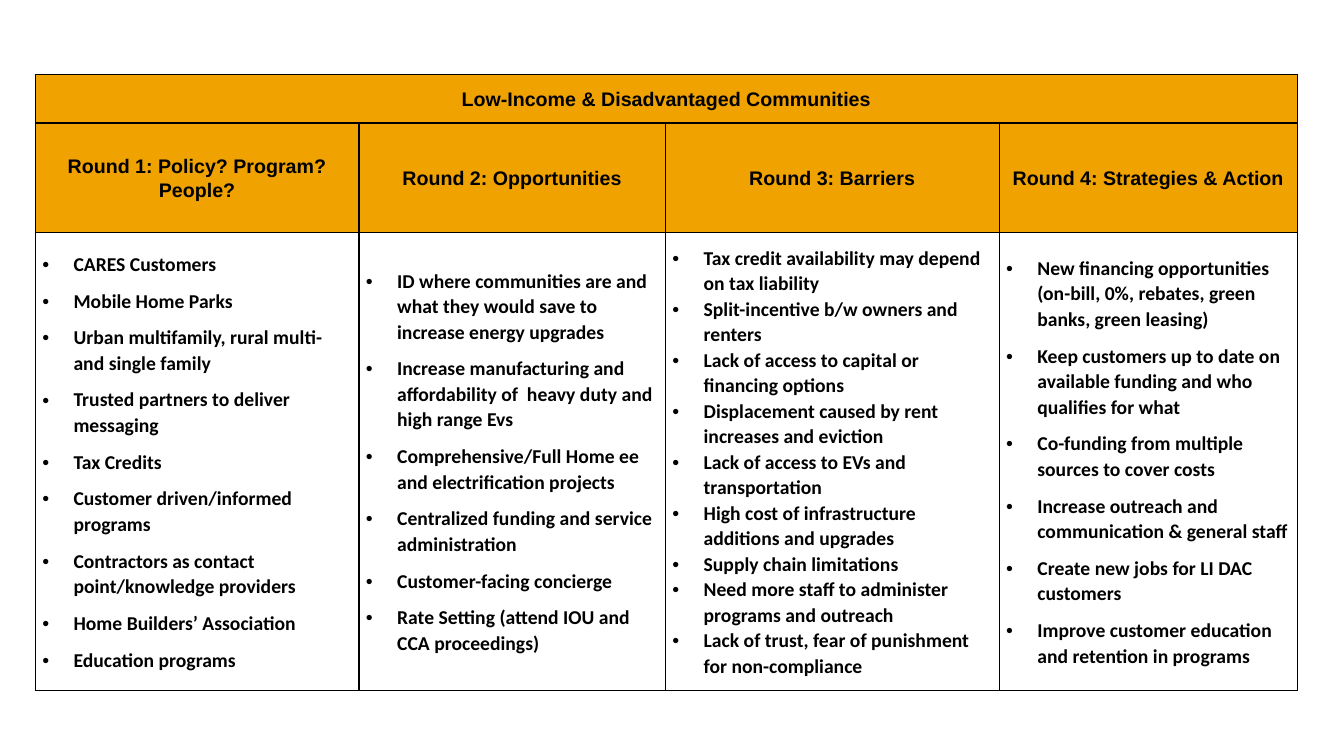
from lxml import etree
from pptx import Presentation
from pptx.dml.color import RGBColor
from pptx.enum import text
from pptx.oxml import ns
from pptx.util import Inches, Pt

BLACK = "000000"
ORANGE = "EFA200"
COLUMN_WIDTHS = (3.21, 3.04, 3.31, 2.96)
ROW_HEIGHTS = (0.48, 1.09, 4.54)
TABLE_TITLE = "Low-Income & Disadvantaged Communities"

# heading, space after each item in points, items
ROUNDS = [
    ("Round 1: Policy? Program? People?", 8, [
        "CARES Customers",
        "Mobile Home Parks",
        "Urban multifamily, rural multi- and single family",
        "Trusted partners to deliver messaging",
        "Tax Credits",
        "Customer driven/informed programs",
        "Contractors as contact point/knowledge providers",
        "Home Builders’ Association",
        "Education programs",
    ]),
    ("Round 2: Opportunities", 8, [
        "ID where communities are and what they would save to increase energy upgrades",
        "Increase manufacturing and affordability of  heavy duty and high range Evs",
        "Comprehensive/Full Home ee and electrification projects",
        "Centralized funding and service administration",
        "Customer-facing concierge",
        "Rate Setting (attend IOU and CCA proceedings)",
    ]),
    ("Round 3: Barriers", 0, [
        "Tax credit availability may depend on tax liability",
        "Split-incentive b/w owners and renters",
        "Lack of access to capital or financing options",
        "Displacement caused by rent increases and eviction",
        "Lack of access to EVs and transportation",
        "High cost of infrastructure additions and upgrades",
        "Supply chain limitations",
        "Need more staff to administer programs and outreach",
        "Lack of trust, fear of punishment for non-compliance",
    ]),
    ("Round 4: Strategies & Action", 8, [
        "New financing opportunities (on-bill, 0%, rebates, green banks, green leasing)",
        "Keep customers up to date on available funding and who qualifies for what",
        "Co-funding from multiple sources to cover costs",
        "Increase outreach and communication & general staff",
        "Create new jobs for LI DAC customers",
        "Improve customer education and retention in programs",
    ]),
]


def color(hex_value):
    return RGBColor.from_string(hex_value)


def add_element(parent, tag, **attributes):
    return etree.SubElement(parent, ns.qn(tag), attributes)


def add_borders(cell):
    properties = cell._tc.get_or_add_tcPr()
    for side in ("L", "R", "T", "B"):
        line = add_element(properties, f"a:ln{side}", w=str(Pt(1)))
        fill = add_element(line, "a:solidFill")
        add_element(fill, "a:srgbClr", val=BLACK)


def format_cell(cell):
    cell.vertical_anchor = text.MSO_ANCHOR.MIDDLE
    cell.margin_left = cell.margin_right = Inches(0.07)
    cell.margin_top = cell.margin_bottom = 0
    add_borders(cell)


def write_paragraph(paragraph, wording, font_name, space_after):
    paragraph.line_spacing = 1.07
    paragraph.space_after = Pt(space_after)
    run = paragraph.add_run()
    run.text = wording
    run.font.name = font_name
    run.font.size = Pt(14)
    run.font.bold = True
    run.font.color.rgb = color(BLACK)


def add_bullet(paragraph):
    properties = paragraph._p.get_or_add_pPr()
    indent = Inches(0.31)
    properties.set("marL", str(indent))
    properties.set("indent", str(-indent))
    add_element(properties, "a:buFont", typeface="Arial")
    add_element(properties, "a:buChar", char="•")


def write_heading(cell, wording):
    cell.fill.solid()
    cell.fill.fore_color.rgb = color(ORANGE)
    paragraph = cell.text_frame.paragraphs[0]
    paragraph.alignment = text.PP_ALIGN.CENTER
    write_paragraph(paragraph, wording, "Arial", 8)


def write_list(cell, items, space_after):
    cell.fill.background()
    frame = cell.text_frame
    for index, item in enumerate(items):
        paragraph = frame.add_paragraph() if index else frame.paragraphs[0]
        write_paragraph(paragraph, item, "Calibri", space_after)
        add_bullet(paragraph)


def add_rounds_table(slide):
    table = slide.shapes.add_table(
        len(ROW_HEIGHTS), len(COLUMN_WIDTHS), Inches(0.35), Inches(0.74),
        Inches(sum(COLUMN_WIDTHS)), Inches(sum(ROW_HEIGHTS))).table
    table.first_row = table.horz_banding = False
    for column, width in zip(table.columns, COLUMN_WIDTHS):
        column.width = Inches(width)
    for row, height in zip(table.rows, ROW_HEIGHTS):
        row.height = Inches(height)
    for cell in table.iter_cells():
        format_cell(cell)

    title_cell = table.cell(0, 0)
    title_cell.merge(table.cell(0, len(COLUMN_WIDTHS) - 1))
    write_heading(title_cell, TABLE_TITLE)
    for index, (heading, space_after, items) in enumerate(ROUNDS):
        write_heading(table.cell(1, index), heading)
        write_list(table.cell(2, index), items, space_after)


def main():
    presentation = Presentation()
    presentation.slide_width = Inches(13.33)
    presentation.slide_height = Inches(7.5)
    slide = presentation.slides.add_slide(presentation.slide_layouts[6])
    add_rounds_table(slide)
    presentation.save("out.pptx")


if __name__ == "__main__":
    main()
